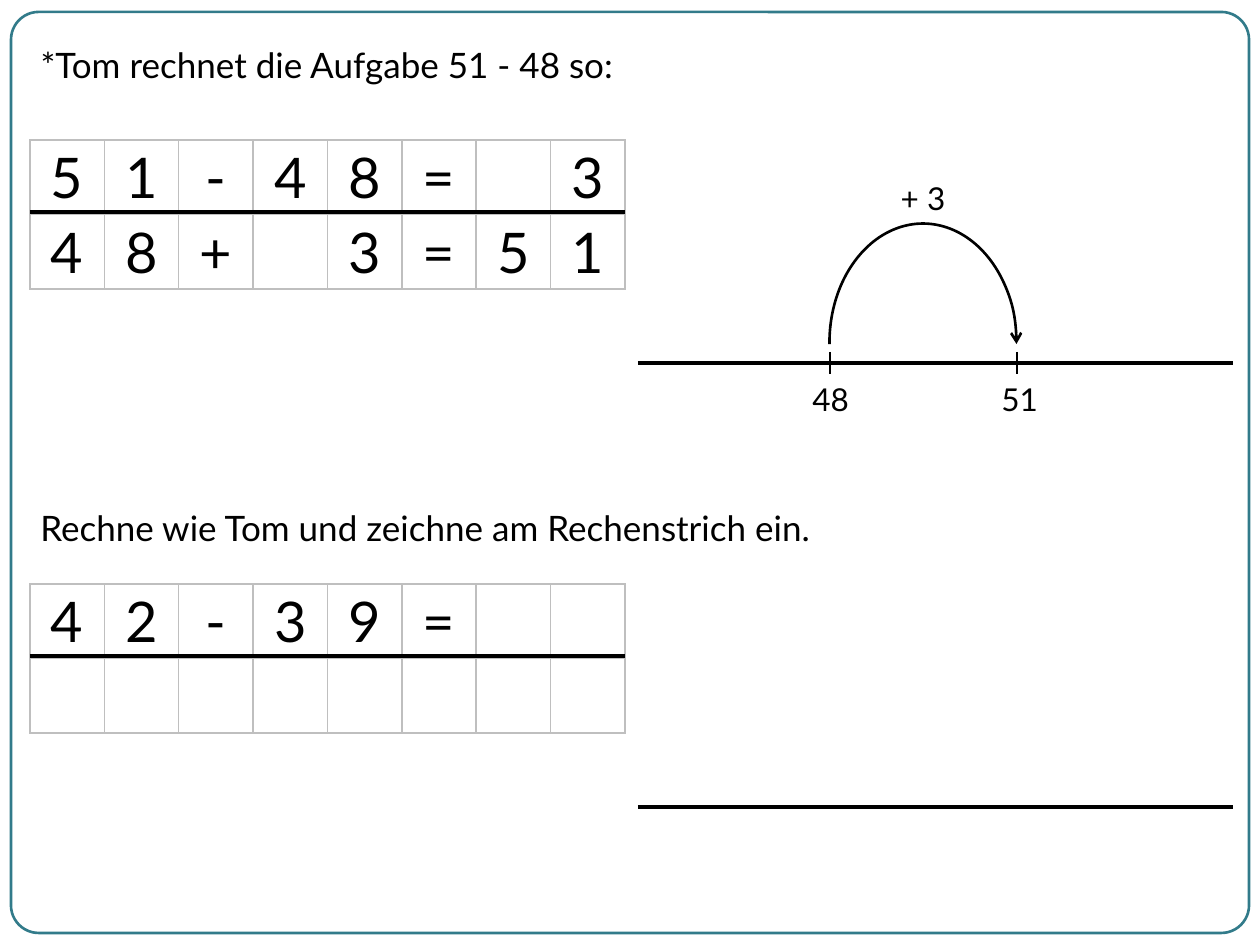
"""Build a worksheet slide on subtracting by adding up on a number line."""
from lxml.etree import SubElement
from pptx import Presentation
from pptx.dml.color import RGBColor
from pptx.enum.shapes import MSO_CONNECTOR, MSO_SHAPE
from pptx.enum.text import MSO_ANCHOR, MSO_AUTO_SIZE, PP_ALIGN
from pptx.oxml import parse_xml
from pptx.oxml.ns import nsdecls, qn
from pptx.util import Emu, Pt

BLACK = RGBColor(0x00, 0x00, 0x00)
TEAL = RGBColor(0x32, 0x7B, 0x8A)
GRID = "BFBFBF"
FONT = "Lato"
PX = 914400 / 126

TITLE = ("*Tom rechnet die Aufgabe 51 - 48 so:", (28, 37, 902, 55))
TASK = ("Rechne wie Tom und zeichne am Rechenstrich ein.", (28, 500, 1211, 55))
FRAME = (11, 12, 1238, 921)
GRIDS = [
    (140, ["51-48= 3", "48+ 3=51"]),
    (584, ["42-39=  ", "        "]),
]
GRID_LEFT, GRID_WIDTH, GRID_HEIGHT = 30, 595, 149
RULE_OFFSET = 72
NUMBER_LINES = [363, 807]
LINE_LEFT, LINE_RIGHT = 638, 1233
TICKS = [830, 1017]
TICK_TOP, TICK_BOTTOM = 352, 374
LABELS = [
    ("48", (797, 374, 67, 50)),
    ("51", (986, 374, 67, 50)),
    ("+ 3", (870, 173, 106, 50)),
]
ARC = (804, 249, 238, 187)
ARC_ANGLES = (269.08, 90.93)


def px(*lengths):
    return [Emu(round(length * PX)) for length in lengths]


def assign(target, values):
    for name, value in values.items():
        setattr(target, name, value)


def write(frame, text, size, align=PP_ALIGN.LEFT):
    frame.text = text
    paragraph = frame.paragraphs[0]
    paragraph.alignment = align
    assign(paragraph.runs[0].font, {"name": FONT, "size": Pt(size)})
    paragraph.runs[0].font.color.rgb = BLACK


def add_text(slide, text, box, size, align=PP_ALIGN.LEFT):
    frame = slide.shapes.add_textbox(*px(*box)).text_frame
    frame.word_wrap = True
    write(frame, text, size, align)


def add_line(slide, start, end, width):
    line = slide.shapes.add_connector(MSO_CONNECTOR.STRAIGHT, *px(*start, *end))
    line.line.color.rgb = BLACK
    line.line.width = Pt(width)
    SubElement(line._element.spPr, qn("a:effectLst"))


def add_outline(slide, kind, box, adjustments, color):
    shape = slide.shapes.add_shape(kind, *px(*box))
    for index, value in enumerate(adjustments):
        shape.adjustments[index] = value
    shape.shadow.inherit = False
    shape.fill.background()
    shape.line.color.rgb = color
    shape.line.width = Pt(1.5)
    return shape


def format_cell(cell, character):
    assign(cell, dict.fromkeys(
        ("margin_left", "margin_right", "margin_top", "margin_bottom"), 0))
    cell.vertical_anchor = MSO_ANCHOR.MIDDLE
    if character.strip():
        write(cell.text_frame, character, 32, PP_ALIGN.CENTER)
    cell.fill.background()
    properties = cell._tc.get_or_add_tcPr()
    for index, side in enumerate("LRTB"):
        properties.insert(index, parse_xml(
            f'<a:ln{side} {nsdecls("a")} w="12700"><a:solidFill>'
            f'<a:srgbClr val="{GRID}"/></a:solidFill></a:ln{side}>'))


def add_grid(slide, top, rows):
    columns = len(rows[0])
    table = slide.shapes.add_table(
        len(rows), columns, *px(GRID_LEFT, top, GRID_WIDTH, GRID_HEIGHT)).table
    assign(table, {"first_row": False, "horz_banding": False})
    for column in table.columns:
        column.width = px(GRID_WIDTH / columns)[0]
    for row, characters in zip(table.rows, rows):
        row.height = px(GRID_HEIGHT / len(rows))[0]
        for cell, character in zip(row.cells, characters):
            format_cell(cell, character)


def add_title(slide):
    text, box = TITLE
    title = slide.shapes.title
    assign(title, dict(zip(("left", "top", "width", "height"), px(*box))))
    assign(title.text_frame, {
        "word_wrap": True,
        "auto_size": MSO_AUTO_SIZE.NONE,
        "vertical_anchor": MSO_ANCHOR.TOP,
    })
    write(title.text_frame, text, 20)


def main():
    presentation = Presentation()
    presentation.slide_width, presentation.slide_height = px(1260, 945)
    slide = presentation.slides.add_slide(presentation.slide_layouts[5])
    add_outline(slide, MSO_SHAPE.ROUNDED_RECTANGLE, FRAME, [0.03], TEAL)
    add_title(slide)
    add_text(slide, *TASK, 20)
    for top, rows in GRIDS:
        add_grid(slide, top, rows)
        rule = top + RULE_OFFSET
        add_line(slide, (GRID_LEFT, rule), (GRID_LEFT + GRID_WIDTH, rule), 2.25)
    arc = add_outline(slide, MSO_SHAPE.ARC, ARC,
                      [angle * 0.6 for angle in ARC_ANGLES], BLACK)
    arc.rotation = 270
    SubElement(arc.line._get_or_add_ln(), qn("a:tailEnd"), type="arrow")
    for y in NUMBER_LINES:
        add_line(slide, (LINE_LEFT, y), (LINE_RIGHT, y), 2.25)
    for x in TICKS:
        add_line(slide, (x, TICK_TOP), (x, TICK_BOTTOM), 1.5)
    for text, box in LABELS:
        add_text(slide, text, box, 18, PP_ALIGN.CENTER)
    presentation.save("out.pptx")


if __name__ == "__main__":
    main()
